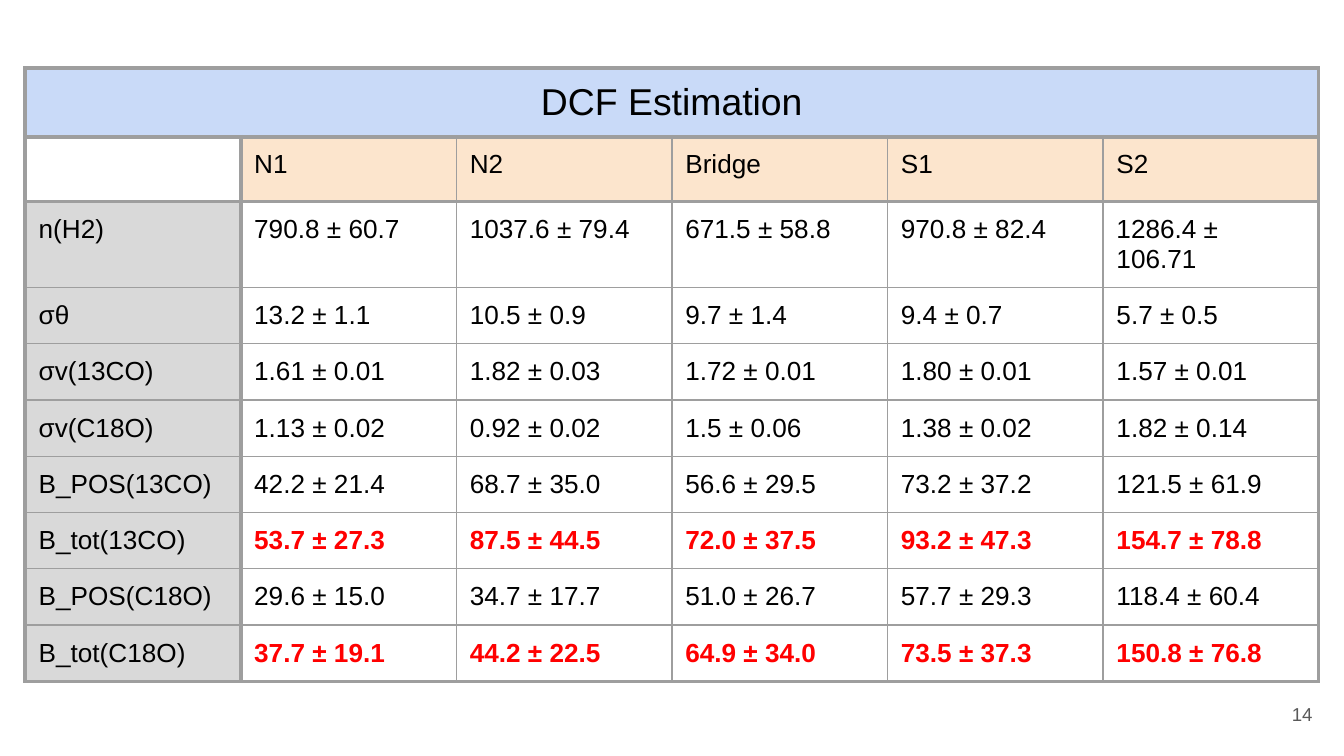
from lxml import etree
from pptx import Presentation
from pptx.dml.color import RGBColor
from pptx.enum import text
from pptx.oxml import ns
from pptx.util import Pt

ROWS = [
    ["DCF Estimation", "", "", "", "", ""],
    ["", "N1", "N2", "Bridge", "S1", "S2"],
    ["n(H2)", "790.8 ± 60.7", "1037.6 ± 79.4", "671.5 ± 58.8", "970.8 ± 82.4", "1286.4 ± 106.71"],
    ["σθ", "13.2 ± 1.1", "10.5 ± 0.9", "9.7 ± 1.4", "9.4 ± 0.7", "5.7 ± 0.5"],
    ["σv(13CO)", "1.61 ± 0.01", "1.82 ± 0.03", "1.72 ± 0.01", "1.80 ± 0.01", "1.57 ± 0.01"],
    ["σv(C18O)", "1.13 ± 0.02", "0.92 ± 0.02", "1.5 ± 0.06", "1.38 ± 0.02", "1.82 ± 0.14"],
    ["B_POS(13CO)", "42.2 ± 21.4", "68.7 ± 35.0", "56.6 ± 29.5", "73.2 ± 37.2", "121.5 ± 61.9"],
    ["B_tot(13CO)", "53.7 ± 27.3", "87.5 ± 44.5", "72.0 ± 37.5", "93.2 ± 47.3", "154.7 ± 78.8"],
    ["B_POS(C18O)", "29.6 ± 15.0", "34.7 ± 17.7", "51.0 ± 26.7", "57.7 ± 29.3", "118.4 ± 60.4"],
    ["B_tot(C18O)", "37.7 ± 19.1", "44.2 ± 22.5", "64.9 ± 34.0", "73.5 ± 37.3", "150.8 ± 76.8"],
]
HEIGHTS = [36.5, 34.8, 45.8] + [30.1] * 7
COLUMN_WIDTH = 115.5
HEAVY_ROW_EDGES = {0, 1, 2, len(ROWS)}
HEAVY_COLUMN_EDGES = {0, 1, len(ROWS[0])}


def style_font(font, size, color, bold=False):
    font.name = "Arial"
    font.size = Pt(size)
    font.bold = bold
    font.color.rgb = RGBColor.from_string(color)


def set_borders(cell, heavy_sides):
    """Draw all four cell borders, thicker on the sides in heavy_sides."""
    properties = cell._tc.get_or_add_tcPr()
    for index, side in enumerate("LRTB"):
        line = etree.Element(ns.qn(f"a:ln{side}"), w=str(Pt(2.25 if side in heavy_sides else 0.75)))
        fill = etree.SubElement(line, ns.qn("a:solidFill"))
        etree.SubElement(fill, ns.qn("a:srgbClr"), val="9E9E9E")
        properties.insert(index, line)


deck = Presentation()
deck.slide_width, deck.slide_height = Pt(720), Pt(405)
page = deck.slides.add_slide(deck.slide_layouts[6])

frame = page.shapes.add_table(len(ROWS), len(ROWS[0]), Pt(13.5), Pt(36.5),
                              Pt(COLUMN_WIDTH * len(ROWS[0])), Pt(sum(HEIGHTS)))
table = frame.table
table.first_row = table.horz_banding = False
for column in table.columns:
    column.width = Pt(COLUMN_WIDTH)
for row, height in zip(table.rows, HEIGHTS):
    row.height = Pt(height)

for r, values in enumerate(ROWS):
    for c, value in enumerate(values):
        cell = table.cell(r, c)
        if value:
            cell.margin_left = cell.margin_right = cell.margin_top = cell.margin_bottom = Pt(7.2)
            # Table cells take their font from the run, not from the paragraph.
            span = cell.text_frame.paragraphs[0].add_run()
            span.text = value
            highlighted = c > 0 and values[0].startswith("B_tot")
            style_font(span.font, 20 if r == 0 else 14, "FF0000" if highlighted else "000000", highlighted)

        if r == 0:
            fill_color = "C9DAF8"
        elif r == 1 and c > 0:
            fill_color = "FCE5CD"
        elif r > 1 and c == 0:
            fill_color = "D9D9D9"
        else:
            fill_color = None
        if fill_color:
            cell.fill.solid()
            cell.fill.fore_color.rgb = RGBColor.from_string(fill_color)
        else:
            cell.fill.background()

        edges = {"L": c in HEAVY_COLUMN_EDGES, "R": c + 1 in HEAVY_COLUMN_EDGES,
                 "T": r in HEAVY_ROW_EDGES, "B": r + 1 in HEAVY_ROW_EDGES}
        set_borders(cell, "LRTB" if r == 0 else [side for side, heavy in edges.items() if heavy])

heading = table.cell(0, 0)
heading.merge(table.cell(0, len(ROWS[0]) - 1))
heading.text_frame.paragraphs[0].alignment = text.PP_ALIGN.CENTER

number_box = page.shapes.add_textbox(Pt(667), Pt(367.2), Pt(43.2), Pt(31))
number_frame = number_box.text_frame
number_frame.word_wrap = True
number_frame.vertical_anchor = text.MSO_ANCHOR.MIDDLE
number_frame.margin_left = number_frame.margin_right = Pt(7.2)
number_frame.margin_top = number_frame.margin_bottom = Pt(7.2)
number_frame.text = "14"
number = number_frame.paragraphs[0]
number.alignment = text.PP_ALIGN.RIGHT
style_font(number.font, 10, "595959")

deck.save("out.pptx")
